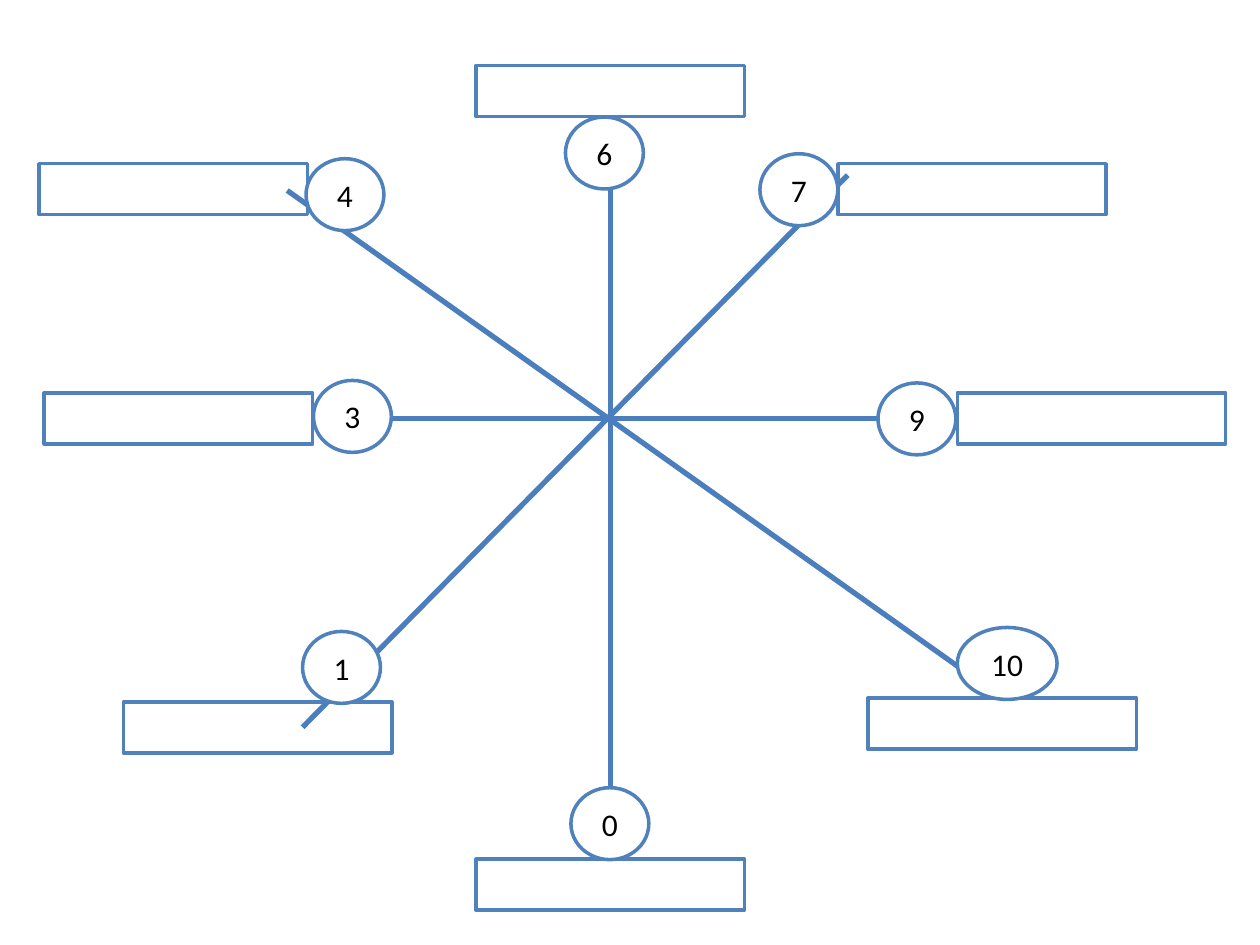
from dataclasses import dataclass

from lxml.etree import SubElement
from pptx import Presentation
from pptx.dml.color import RGBColor as Rgb
from pptx.enum.shapes import MSO_CONNECTOR as Conn, MSO_SHAPE as Kind
from pptx.enum.text import MSO_ANCHOR as Anchor, MSO_AUTO_SIZE as Fit, PP_ALIGN as Align
from pptx.oxml.ns import qn
from pptx.util import Cm, Pt


@dataclass(frozen=True)
class Theme:
    fill: Rgb = Rgb(0xFF, 0xFF, 0xFF)
    edge: Rgb = Rgb(0x4F, 0x81, 0xBD)
    spoke: Rgb = Rgb(0x4B, 0x7E, 0xBC)
    ink: Rgb = Rgb(0, 0, 0)
    font: str = "Calibri"
    size: int = 18
    thin: int = 2
    thick: int = 3


class Wheel:
    def __init__(self, theme, slide):
        self.theme = theme
        self.slide = slide

    def shape(self, kind, x, y, w, h):
        item = self.slide.shapes.add_shape(kind, Cm(x), Cm(y), Cm(w), Cm(h))
        item.shadow.inherit = False
        item.fill.solid()
        item.fill.fore_color.rgb = self.theme.fill
        item.line.color.rgb = self.theme.edge
        item.line.width = Pt(self.theme.thin)
        return item

    def label(self, x, y):
        return self.shape(Kind.RECTANGLE, x, y, 5.41, 1.03)

    def node(self, text, x, y, w=1.57):
        item = self.shape(Kind.OVAL, x, y, w, 1.45)
        frame = item.text_frame
        frame.word_wrap = False
        frame.auto_size = Fit.SHAPE_TO_FIT_TEXT
        frame.vertical_anchor = Anchor.MIDDLE
        para = frame.paragraphs[0]
        para.alignment = Align.CENTER
        run = para.add_run()
        run.text = text
        run.font.name = self.theme.font
        run.font.size = Pt(self.theme.size)
        run.font.color.rgb = self.theme.ink

    def spoke(self, start=(0, 0), end=(0, 0), tail=None, head=None):
        """Draw a line; tail and head are (shape, side) pairs to join."""
        ends = [Cm(v) for v in (*start, *end)]
        line = self.slide.shapes.add_connector(Conn.STRAIGHT, *ends)
        line.line.color.rgb = self.theme.spoke
        line.line.width = Pt(self.theme.thick)
        SubElement(line._element.spPr, qn("a:effectLst"))
        if tail:
            line.begin_connect(*tail)
        if head:
            line.end_connect(*head)


def main():
    deck = Presentation()
    deck.slide_width, deck.slide_height = Cm(25.4), Cm(19.05)
    wheel = Wheel(Theme(), deck.slides.add_slide(deck.slide_layouts[6]))

    # Label boxes
    top, low = (wheel.label(9.6, y) for y in (1.32, 17.32))
    left, right = (wheel.label(x, 7.92) for x in (0.89, 19.3))
    wheel.label(0.79, 3.3)
    wheel.label(16.89, 3.3)
    wheel.label(2.49, 14.15)
    corner = wheel.label(17.5, 14.07)

    # Spokes
    wheel.spoke(tail=(top, 2), head=(low, 0))
    wheel.spoke(tail=(left, 3), head=(right, 1))
    wheel.spoke((17.09, 3.53), (6.1, 14.66))
    wheel.spoke((5.79, 3.84), tail=None, head=(corner, 0))

    # Numbered nodes
    for text, x, y in (
        ("9", 17.7, 7.72),
        ("7", 15.32, 3.1),
        ("6", 11.4, 2.36),
        ("4", 6.17, 3.2),
        ("3", 6.32, 7.67),
        ("1", 6.1, 12.73),
        ("0", 11.51, 15.88),
    ):
        wheel.node(text, x, y)
    wheel.node("10", 19.3, 12.65, 2.01)

    deck.save("out.pptx")


if __name__ == "__main__":
    main()
